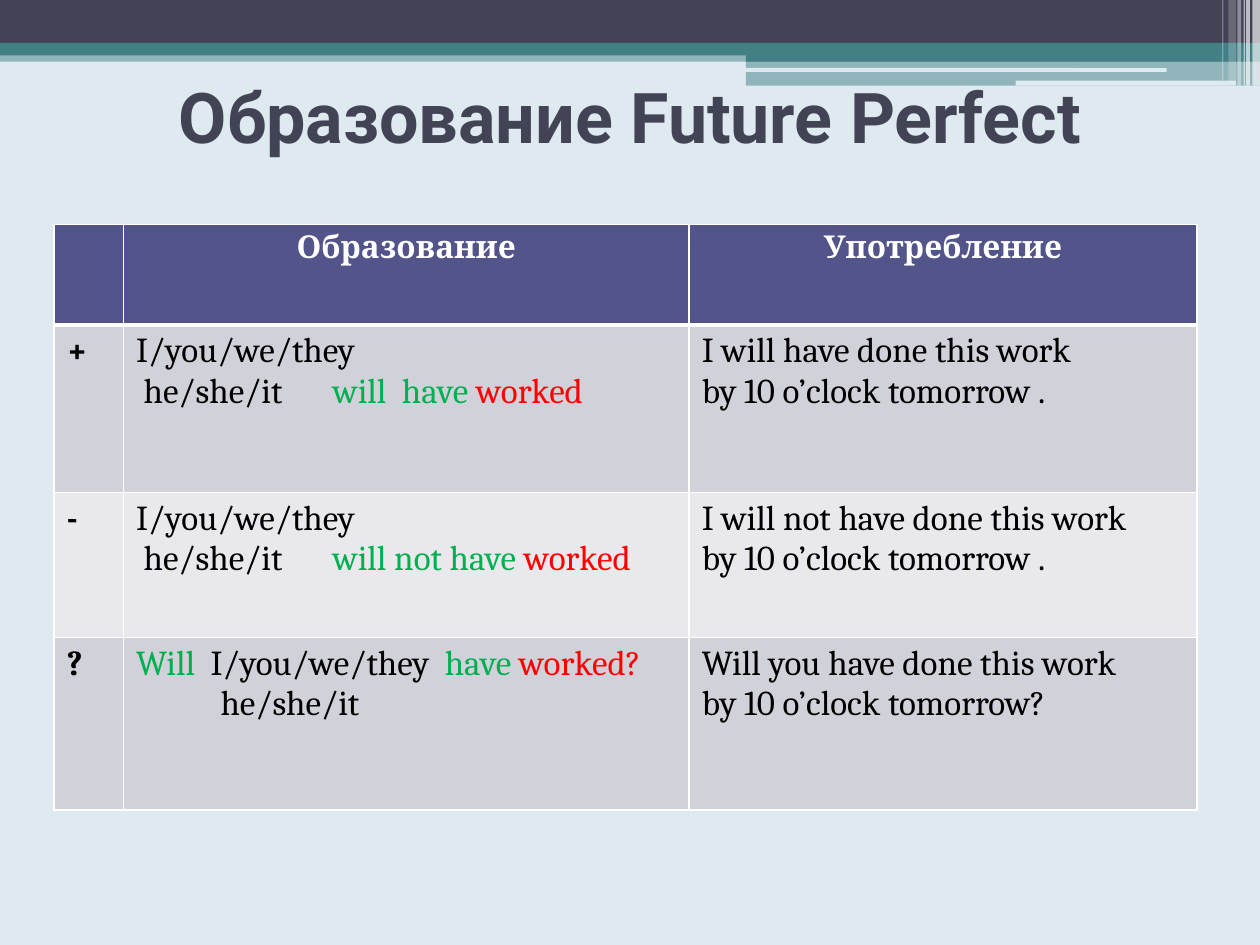
from lxml.etree import SubElement
from pptx import Presentation
from pptx.dml.color import RGBColor
from pptx.enum.shapes import MSO_SHAPE
from pptx.enum.text import MSO_ANCHOR, PP_ALIGN
from pptx.oxml import parse_xml
from pptx.oxml.ns import nsdecls, qn
from pptx.util import Inches, Pt

PALE = RGBColor(0xDE, 0xE9, 0xF0)
SLATE = RGBColor(0x42, 0x44, 0x56)
TEAL = RGBColor(0x43, 0x80, 0x86)
WHITE = RGBColor(0xFF, 0xFF, 0xFF)
BLACK = RGBColor(0x00, 0x00, 0x00)
GREEN = RGBColor(0x00, 0xB0, 0x50)
RED = RGBColor(0xFF, 0x00, 0x00)
HEADER = RGBColor(0x53, 0x54, 0x8A)
BANDS = [RGBColor(0xE9, 0xE9, 0xED), RGBColor(0xD1, 0xD1, 0xDA)]


def add_bar(left, top, width, height, color, opacity=100, kind=MSO_SHAPE.RECTANGLE):
    bar = slide.shapes.add_shape(
        kind, Inches(left), Inches(top), Inches(width), Inches(height))
    bar.shadow.inherit = False
    bar.line.fill.background()
    bar.fill.solid()
    bar.fill.fore_color.rgb = color
    if opacity < 100:
        color_element = bar.fill._xPr.find(qn("a:solidFill"))[0]
        SubElement(color_element, qn("a:alpha"), val=str(opacity * 1000))


def set_borders(cell, widths):
    properties = cell._tc.get_or_add_tcPr()
    for position, (side, points) in enumerate(widths.items()):
        properties.insert(position, parse_xml(
            f'<a:ln{side} {nsdecls("a")} w="{Pt(points)}"><a:solidFill>'
            f'<a:srgbClr val="{WHITE}"/></a:solidFill></a:ln{side}>'))


presentation = Presentation()
presentation.slide_width = Inches(10)
presentation.slide_height = Inches(7.5)
slide = presentation.slides.add_slide(presentation.slide_layouts[5])
slide.background.fill.solid()
slide.background.fill.fore_color.rgb = PALE

# Header bands
add_bar(0, 0.4, 10, 0.09, TEAL, 50)
add_bar(0, 0, 10, 0.34, SLATE)
add_bar(0, 0.34, 10, 0.1, TEAL)
add_bar(5.92, 0.39, 4.08, 0.1, TEAL)
add_bar(5.92, 0.48, 4.08, 0.2, TEAL, 50)
add_bar(5.91, 0.54, 3.35, 0.03, PALE, kind=MSO_SHAPE.ROUNDED_RECTANGLE)
add_bar(8.06, 0.64, 1.75, 0.04, PALE, kind=MSO_SHAPE.ROUNDED_RECTANGLE)

# Vertical stripes in the corner
for left, width, height, opacity in [
    (9.94, 0.06, 0.68, 65), (9.89, 0.03, 0.68, 65), (9.87, 0.01, 0.68, 60),
    (9.82, 0.03, 0.68, 40), (9.75, 0.06, 0.64, 20), (9.7, 0.01, 0.64, 30),
]:
    add_bar(left, 0, width, height, WHITE, opacity)

# Title
title = slide.shapes.title
title.left, title.top = Inches(0.5), Inches(0.21)
title.width, title.height = Inches(9), Inches(1.42)
title.text_frame.vertical_anchor = MSO_ANCHOR.MIDDLE
title.text_frame.text = "Образование Future Perfect"
paragraph = title.text_frame.paragraphs[0]
paragraph.alignment = PP_ALIGN.CENTER
paragraph.font.name = "Roboto"
paragraph.font.size = Pt(40)
paragraph.font.bold = True
paragraph.font.color.rgb = SLATE

# Table content: a cell is a list of lines, a line is (indent, tab stop, runs)
def_line = (0, None)
rows = [
    [[], [(*def_line, [("Образование", WHITE)])], [(*def_line, [("Употребление", WHITE)])]],
    [
        [(*def_line, [("+", BLACK)])],
        [(*def_line, [("I/you/we/they", BLACK)]),
         (0.06, 1.95, [("he/she/it\t", BLACK), ("will  have ", GREEN), ("worked", RED)])],
        [(*def_line, [("I will have done this work", BLACK)]),
         (*def_line, [("by 10 o’clock tomorrow .", BLACK)])],
    ],
    [
        [(*def_line, [("-", BLACK)])],
        [(*def_line, [("I/you/we/they", BLACK)]),
         (0.06, 1.58, [("he/she/it\t", BLACK), ("will not have ", GREEN), ("worked", RED)])],
        [(*def_line, [("I will not have done this work", BLACK)]),
         (*def_line, [("by 10 o’clock tomorrow .", BLACK)])],
    ],
    [
        [(*def_line, [("?", BLACK)])],
        [(*def_line, [("Will  ", GREEN), ("I/you/we/they  ", BLACK),
                      ("have ", GREEN), ("worked?", RED)]),
         (0.67, None, [("he/she/it", BLACK)])],
        [(*def_line, [("Will you have done this work", BLACK)]),
         (*def_line, [("by 10 o’clock tomorrow?", BLACK)])],
    ],
]

# Table
table = slide.shapes.add_table(
    4, 3, Inches(0.43), Inches(1.78), Inches(9.07), Inches(4.65)).table
for column, width in zip(table.columns, [0.55, 4.49, 4.03]):
    column.width = Inches(width)
for row, height in zip(table.rows, [0.8, 1.33, 1.15, 1.37]):
    row.height = Inches(height)

for row_index, row in enumerate(rows):
    for column_index, lines in enumerate(row):
        cell = table.cell(row_index, column_index)
        cell.fill.solid()
        cell.fill.fore_color.rgb = BANDS[row_index % 2] if row_index else HEADER
        set_borders(cell, {"L": 1, "R": 1, "T": 3 if row_index == 1 else 1,
                           "B": 3 if row_index == 0 else 1})
        for line_index, (indent, tab_stop, runs) in enumerate(lines):
            frame = cell.text_frame
            paragraph = frame.add_paragraph() if line_index else frame.paragraphs[0]
            paragraph.font.name = "Cambria"
            paragraph.font.size = Pt(20 if row_index else 18)
            paragraph.font.bold = row_index == 0 or column_index == 0
            if row_index == 0:
                paragraph.alignment = PP_ALIGN.CENTER
            properties = paragraph._p.get_or_add_pPr()
            if indent:
                properties.set("marL", str(Inches(indent)))
                properties.set("indent", "0")
            if tab_stop:
                properties.insert(0, parse_xml(
                    f'<a:tabLst {nsdecls("a")}><a:tab pos="{Inches(tab_stop)}" algn="l"/>'
                    '</a:tabLst>'))
            for text, color in runs:
                run = paragraph.add_run()
                run.text = text
                run.font.color.rgb = color

presentation.save("out.pptx")
